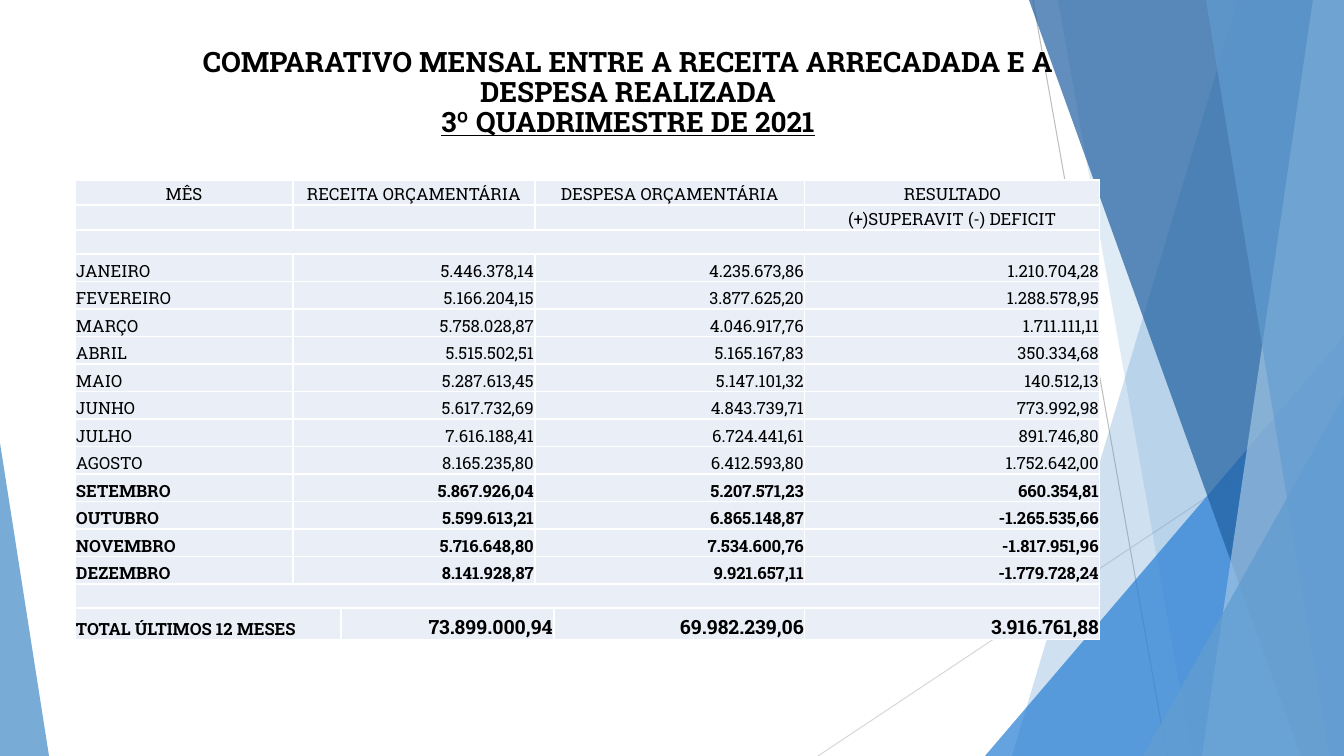
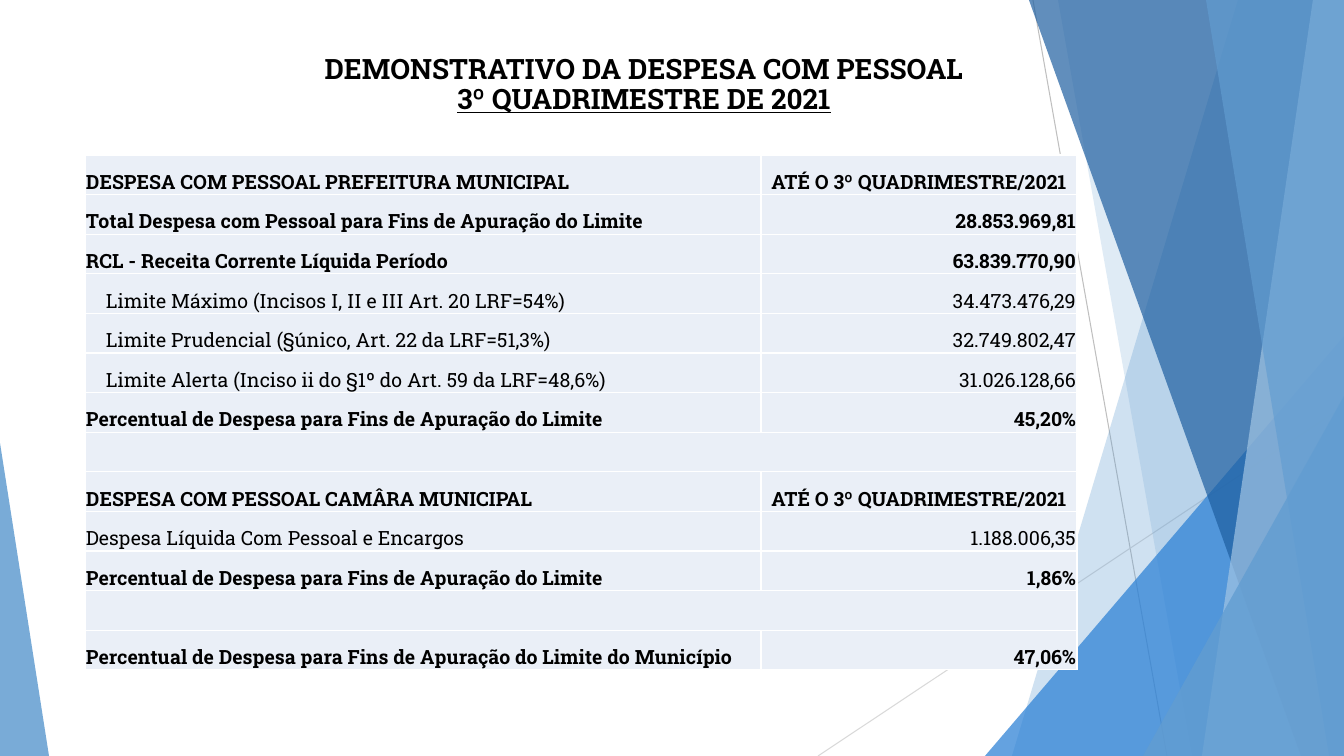
from dataclasses import dataclass

from lxml import etree
from pptx import Presentation
from pptx import util as u
from pptx.dml.color import RGBColor
from pptx.enum import shapes, text
from pptx.oxml import ns

W, H = 1344, 756
SCALE = 914400 / 100.8


@dataclass(frozen=True)
class Theme:
    font: str = "Roboto Slab"
    ink: str = "000000"
    cell: str = "EAEFF7"
    border: str = "FFFFFF"
    grey: str = "BFBFBF"
    pale_grey: str = "D9D9D9"
    sky: str = "629DD1"
    pale_sky: str = "A1C4E3"
    blue: str = "297FD5"
    navy: str = "1F5FA0"
    title: int = 20
    body: int = 14
    small: int = 12


T = Theme()
LEFT, CENTER, RIGHT = text.PP_ALIGN.LEFT, text.PP_ALIGN.CENTER, text.PP_ALIGN.RIGHT

# Backdrop parts, from back to front
LINES = [((1033, 0, 1167, H), T.grey), ((W, 406, 818, H), T.pale_grey)]
FACETS = [  # wedge: top x, bottom x; triangle: box, tip position
    ("wedge", (1238, 1012), T.sky, 30),
    ("wedge", (1058, 1192), T.sky, 20),
    ("triangle", (985, 336, 359, 420, 1), T.blue, 72),
    ("wedge", (1029, 1301), T.navy, 70),
    ("wedge", (1313, 1202), T.pale_sky, 70),
    ("wedge", (1206, 1329), T.sky, 65),
    ("triangle", (1143, 396, 201, 360, 1), T.sky, 80),
    ("triangle", (0, 443, 49, 313, 0), T.sky, 85),
]

MONTHS = [
    ("JANEIRO", "5.446.378,14", "4.235.673,86", "1.210.704,28"),
    ("FEVEREIRO", "5.166.204,15", "3.877.625,20", "1.288.578,95"),
    ("MARÇO", "5.758.028,87", "4.046.917,76", "1.711.111,11"),
    ("ABRIL", "5.515.502,51", "5.165.167,83", "350.334,68"),
    ("MAIO", "5.287.613,45", "5.147.101,32", "140.512,13"),
    ("JUNHO", "5.617.732,69", "4.843.739,71", "773.992,98"),
    ("JULHO", "7.616.188,41", "6.724.441,61", "891.746,80"),
    ("AGOSTO", "8.165.235,80", "6.412.593,80", "1.752.642,00"),
    ("SETEMBRO", "5.867.926,04", "5.207.571,23", "660.354,81"),
    ("OUTUBRO", "5.599.613,21", "6.865.148,87", "-1.265.535,66"),
    ("NOVEMBRO", "5.716.648,80", "7.534.600,76", "-1.817.951,96"),
    ("DEZEMBRO", "8.141.928,87", "9.921.657,11", "-1.779.728,24"),
]
QUARTER_FIRST_ROW = 8

UNTIL = "ATÉ O 3º QUADRIMESTRE/2021"
LIMIT = "Percentual de Despesa para Fins de Apuração do Limite"
STAFF = [  # kind, label, value
    ("head", "DESPESA COM PESSOAL PREFEITURA MUNICIPAL", UNTIL),
    ("bold", "Total Despesa com Pessoal para Fins de Apuração do Limite", "28.853.969,81"),
    ("bold", "RCL - Receita Corrente Líquida Período", "63.839.770,90"),
    ("sub", "Limite Máximo (Incisos I, II e III Art. 20 LRF=54%)", "34.473.476,29"),
    ("sub", "Limite Prudencial (§único, Art. 22 da LRF=51,3%)", "32.749.802,47"),
    ("sub", "Limite Alerta (Inciso ii do §1º do Art. 59 da LRF=48,6%)", "31.026.128,66"),
    ("bold", LIMIT, "45,20%"),
    ("blank", "", ""),
    ("head", "DESPESA COM PESSOAL CAMÂRA MUNICIPAL", UNTIL),
    ("plain", "Despesa Líquida Com Pessoal e Encargos", "1.188.006,35"),
    ("bold", LIMIT, "1,86%"),
    ("blank", "", ""),
    ("bold", LIMIT + " do Município", "47,06%"),
]


def px(v):
    return u.Emu(round(v * SCALE))


def rgb(color):
    return RGBColor.from_string(color)


def sub(parent, tag, **attrs):
    return etree.SubElement(parent, ns.qn(tag), attrs)


def set_font(r, **formats):
    values = {"name": T.font, "bold": False, **formats}
    for name, value in values.items():
        setattr(r.font, name, value)
    r.font.color.rgb = rgb(T.ink)


def backdrop(s, layout):
    """Draw the facets and move them to the layout, behind every slide."""
    parts = []
    for ends, color in LINES:
        line = s.shapes.add_connector(shapes.MSO_CONNECTOR.STRAIGHT, *map(px, ends))
        line.line.color.rgb = rgb(color)
        line.line.width = u.Pt(0.75)
        sub(line.element.spPr, "a:effectLst")
        parts.append(line)
    for kind, geometry, color, alpha in FACETS:
        if kind == "wedge":
            top, bottom = geometry
            builder = s.shapes.build_freeform(top, 0, scale=SCALE)
            builder.add_line_segments([(W, 0), (W, H), (bottom, H)])
            sp = builder.convert_to_shape()
        else:
            *box, tip = geometry
            sp = s.shapes.add_shape(shapes.MSO_SHAPE.ISOSCELES_TRIANGLE, *map(px, box))
            sp.adjustments[0] = tip
        sp.shadow.inherit = False
        sp.fill.solid()
        sp.fill.fore_color.rgb = rgb(color)
        sp.line.fill.background()
        paint = sp.element.spPr.find(ns.qn("a:solidFill"))[0]
        sub(paint, "a:alpha", val=str(alpha * 1000))
        parts.append(sp)
    for number, part in enumerate(parts, 100):
        part.element.xpath(".//p:cNvPr")[0].set("id", str(number))
        layout.shapes.element.append(part.element)


def title(s, box, heading, period):
    sp = s.shapes.title
    sp.left, sp.top, sp.width, sp.height = map(px, box)
    tf = sp.text_frame
    formats = {"word_wrap": True, "auto_size": text.MSO_AUTO_SIZE.NONE,
               "vertical_anchor": text.MSO_ANCHOR.TOP}
    for name, value in formats.items():
        setattr(tf, name, value)
    p = tf.paragraphs[0]
    p.alignment, p.line_spacing = CENTER, 0.9
    r = p.add_run()
    r.text = heading
    set_font(r, size=u.Pt(T.title), bold=True)
    p.add_line_break()
    r = p.add_run()
    r.text = period
    set_font(r, size=u.Pt(T.title), bold=True, underline=True)


def format_cell(cell, size):
    cell.fill.solid()
    cell.fill.fore_color.rgb = rgb(T.cell)
    formats = {"margin_left": px(1), "margin_right": px(1), "margin_top": px(1),
               "margin_bottom": 0, "vertical_anchor": text.MSO_ANCHOR.BOTTOM}
    for name, value in formats.items():
        setattr(cell, name, value)
    # Borders come before the fill in the cell properties
    tc_pr = cell.fill._xPr
    for i, side in enumerate(("a:lnL", "a:lnR", "a:lnT", "a:lnB")):
        ln = sub(tc_pr, side, w=str(u.Pt(1)))
        sub(sub(ln, "a:solidFill"), "a:srgbClr", val=T.border)
        tc_pr.insert(i, ln)
    # Keeps empty rows as low as the text rows
    p = cell.text_frame.paragraphs[0]
    sub(p._p, "a:endParaRPr", sz=str(size * 100))


def table(s, box, cols, weights, rows, size):
    """Each row lists (first column, text, alignment, formats, indent)."""
    x, y, w, h = box
    frame = s.shapes.add_table(len(rows), len(cols), px(x), px(y), px(w), px(h))
    grid = frame.table
    grid.first_row = grid.horz_banding = False
    for column, width in zip(grid.columns, cols):
        column.width = px(width)
    for row, weight in zip(grid.rows, weights):
        row.height = px(h * weight / sum(weights))
    for cell in grid.iter_cells():
        format_cell(cell, size)
    for i, row in enumerate(rows):
        ends = [part[0] for part in row[1:]] + [len(cols)]
        for (first, words, align, formats, indent), end in zip(row, ends):
            cell = grid.cell(i, first)
            if end - first > 1:
                cell.merge(grid.cell(i, end - 1))
            if words:
                p = cell.text_frame.paragraphs[0]
                p.alignment = align
                r = p.add_run()
                r.text = words
                set_font(r, **{"size": u.Pt(size), **formats})
                cell.margin_left = px(1 + indent)


def monthly_table(s, box):
    starts = (0, 1, 3, 5)

    def heading(*words):
        return [(c, word, CENTER, {}, 0) for c, word in zip(starts, words)]

    def figures(words, columns, bold, size=T.small):
        label, *values = words
        value_format = {"bold": bold, "size": u.Pt(size)}
        return [(0, label, LEFT, {"bold": bold}, 0)] + [
            (c, v, RIGHT, value_format, 0) for c, v in zip(columns[1:], values)]

    blank = [(0, "", LEFT, {}, 0)]
    total = ("TOTAL ÚLTIMOS 12 MESES", "73.899.000,94", "69.982.239,06", "3.916.761,88")
    rows = [
        heading("MÊS", "RECEITA ORÇAMENTÁRIA", "DESPESA ORÇAMENTÁRIA", "RESULTADO"),
        heading("", "", "", "(+)SUPERAVIT (-) DEFICIT"),
        blank,
        *(figures(m, starts, i >= QUARTER_FIRST_ROW) for i, m in enumerate(MONTHS)),
        blank,
        figures(total, (0, 2, 4, 5), True, T.body),
    ]
    weights = [50, 50, 48, *[55] * len(MONTHS), 48, 63]
    table(s, box, [218, 48, 194, 19, 251, 295], weights, rows, T.small)


def staff_table(s, box):
    rows = []
    for kind, label, value in STAFF:
        formats = {"bold": kind in ("head", "bold")}
        row = [(0, label, LEFT, formats, 20 if kind == "sub" else 0)]
        if kind != "blank":
            row.append((1, value, CENTER if kind == "head" else RIGHT, formats, 0))
        rows.append(row)
    table(s, box, [676, 316], [1] * len(rows), rows, T.body)


def main():
    prs = Presentation()
    prs.slide_width, prs.slide_height = px(W), px(H)
    layout = prs.slide_layouts[5]
    period = "3º QUADRIMESTRE DE 2021"

    # Monthly revenue and expenditure
    s = prs.slides.add_slide(layout)
    backdrop(s, layout)
    title(s, (145, 43, 966, 170),
          "COMPARATIVO MENSAL ENTRE A RECEITA ARRECADADA E A DESPESA REALIZADA", period)
    monthly_table(s, (75, 180, 1025, 460))

    # Staff expenditure
    s = prs.slides.add_slide(layout)
    title(s, (170, 50, 948, 145), "DEMONSTRATIVO DA DESPESA COM PESSOAL", period)
    staff_table(s, (85, 155, 992, 515))

    prs.save("out.pptx")


if __name__ == "__main__":
    main()
